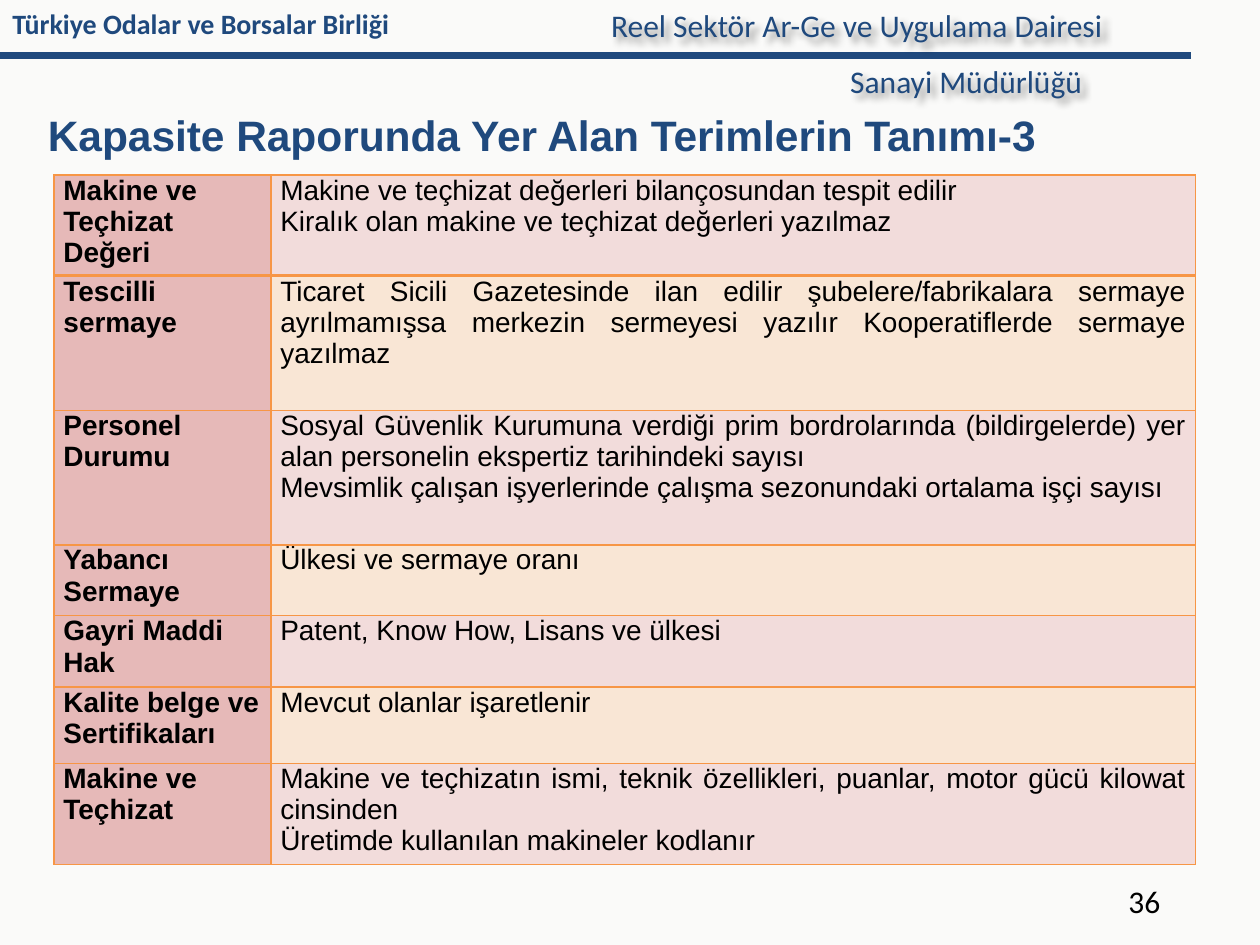
import pptx
import pptx.dml.color
import pptx.enum.shapes
import pptx.enum.text
import pptx.oxml
import pptx.oxml.ns
import pptx.util
from pptx.util import Cm, Pt

COLORS = {
    "background": "FAFAF9",
    "navy": "1F497D",
    "text": "000000",
    "border": "F79646",
    "term": "E6B9B8",
    "pink": "F2DCDB",
    "cream": "F9E6D5",
}

# Term, definition (one paragraph per line), row height in cm
TERMS = [
    ("Makine ve Teçhizat Değeri",
     "Makine ve teçhizat değerleri bilançosundan tespit edilir\n"
     "Kiralık olan makine ve teçhizat değerleri yazılmaz", 2.02),
    ("Tescilli sermaye",
     "Ticaret Sicili Gazetesinde ilan edilir şubelere/fabrikalara sermaye "
     "ayrılmamışsa merkezin sermeyesi yazılır Kooperatiflerde sermaye yazılmaz", 2.71),
    ("Personel Durumu",
     "Sosyal Güvenlik Kurumuna verdiği prim bordrolarında (bildirgelerde) yer "
     "alan personelin ekspertiz tarihindeki sayısı\n"
     "Mevsimlik çalışan işyerlerinde çalışma sezonundaki ortalama işçi sayısı", 2.71),
    ("Yabancı Sermaye", "Ülkesi ve sermaye oranı", 1.43),
    ("Gayri Maddi Hak", "Patent, Know How, Lisans ve ülkesi", 1.44),
    ("Kalite belge ve Sertifikaları", "Mevcut olanlar işaretlenir", 1.54),
    ("Makine ve Teçhizat",
     "Makine ve teçhizatın ismi, teknik özellikleri, puanlar, motor gücü "
     "kilowat cinsinden\nÜretimde kullanılan makineler kodlanır", 2.04),
]
TERM_SHARE = 0.19


def rgb(name):
    return pptx.dml.color.RGBColor.from_string(COLORS[name])


def format_runs(frame, size, font, color, bold=False):
    for paragraph in frame.paragraphs:
        for run in paragraph.runs:
            run.font.size = Pt(size)
            run.font.name = font
            run.font.bold = bold
            run.font.color.rgb = rgb(color)


def set_effects(shape, effects=""):
    """Give the shape its own effect list; an empty one removes the shadow."""
    shape._element.spPr.append(pptx.oxml.parse_xml(
        f'<a:effectLst {pptx.oxml.ns.nsdecls("a")}>{effects}</a:effectLst>'))


def add_label(slide, words, left, top, width, size, color, bold=False):
    label = slide.shapes.add_textbox(Cm(left), Cm(top), Cm(width), Cm(1))
    label.text_frame.word_wrap = True
    label.text_frame.text = words
    format_runs(label.text_frame, size, "Calibri", color, bold)
    return label


def add_header(slide, left, top, width):
    rule_top = top + 1.12
    rule = slide.shapes.add_connector(
        pptx.enum.shapes.MSO_CONNECTOR.STRAIGHT,
        Cm(left), Cm(rule_top), Cm(left + width), Cm(rule_top))
    rule.line.color.rgb = rgb("navy")
    rule.line.width = Pt(4)
    set_effects(rule)

    add_label(slide, "Türkiye Odalar ve Borsalar Birliği",
              left, top, 12, 16, "navy", bold=True)
    department = add_label(slide, "Reel Sektör Ar-Ge ve Uygulama Dairesi",
                           left + 12.07, top, 11.2, 18, "navy")
    directorate = add_label(slide, "Sanayi Müdürlüğü",
                            left + 16.89, rule_top, 6.38, 18, "navy")
    for label in (department, directorate):
        set_effects(label, '<a:outerShdw blurRad="50800" dist="50800" dir="2700000">'
                           '<a:srgbClr val="000000"><a:alpha val="40000"/></a:srgbClr>'
                           '</a:outerShdw>')


def place_title(slide, left, top, width, height):
    title = slide.shapes.title
    title.left, title.top, title.width, title.height = map(Cm, (left, top, width, height))
    frame = title.text_frame
    frame.text = "Kapasite Raporunda Yer Alan Terimlerin Tanımı-3"
    frame.vertical_anchor = pptx.enum.text.MSO_ANCHOR.BOTTOM
    frame.auto_size = pptx.enum.text.MSO_AUTO_SIZE.NONE
    frame.margin_top = frame.margin_bottom = 0
    frame.paragraphs[0].alignment = pptx.enum.text.PP_ALIGN.LEFT
    format_runs(frame, 24.3, "Arial", "navy", bold=True)


def add_borders(cell, top, bottom):
    """Draw the four cell edges; top and bottom are widths in points."""
    properties = cell._tc.get_or_add_tcPr()
    for edge, points in (("lnL", 1), ("lnR", 1), ("lnT", top), ("lnB", bottom)):
        properties.append(pptx.oxml.parse_xml(
            f'<a:{edge} {pptx.oxml.ns.nsdecls("a")} w="{Pt(points)}"><a:solidFill>'
            f'<a:srgbClr val="{COLORS["border"]}"/></a:solidFill></a:{edge}>'))


def fill_cell(cell, words, fill, row_index, bold, alignment):
    add_borders(cell, top=2 if row_index == 1 else 1, bottom=2 if row_index == 0 else 1)
    cell.fill.solid()
    cell.fill.fore_color.rgb = rgb(fill)
    cell.margin_left = cell.margin_right = Cm(0.19)
    cell.margin_top = cell.margin_bottom = 0
    cell.text_frame.text = words
    for paragraph in cell.text_frame.paragraphs:
        paragraph.alignment = alignment
    format_runs(cell.text_frame, 16, "Arial", "text", bold)


def add_terms_table(slide, left, top, width):
    height = sum(row_height for _, _, row_height in TERMS)
    table = slide.shapes.add_table(
        len(TERMS), 2, Cm(left), Cm(top), Cm(width), Cm(height)).table
    table.first_row = table.horz_banding = False
    table.columns[0].width = Cm(width * TERM_SHARE)
    table.columns[1].width = Cm(width * (1 - TERM_SHARE))
    align = pptx.enum.text.PP_ALIGN
    for index, (term, definition, row_height) in enumerate(TERMS):
        table.rows[index].height = Cm(row_height)
        fill_cell(table.cell(index, 0), term, "term", index, True, align.LEFT)
        fill_cell(table.cell(index, 1), definition,
                  "cream" if index % 2 else "pink", index, False, align.JUSTIFY)


def main():
    deck = pptx.Presentation()
    deck.slide_width, deck.slide_height = Cm(25.4), Cm(19.05)
    slide = deck.slides.add_slide(deck.slide_layouts[5])
    slide.background.fill.solid()
    slide.background.fill.fore_color.rgb = rgb("background")

    add_header(slide, left=0, top=0, width=24)
    place_title(slide, left=0.71, top=2.02, width=23.47, height=1.2)
    add_terms_table(slide, left=1.09, top=3.53, width=23.01)
    add_label(slide, "36", 22.5, 17.65, 1.63, 18, "text")
    deck.save("out.pptx")


if __name__ == "__main__":
    main()
